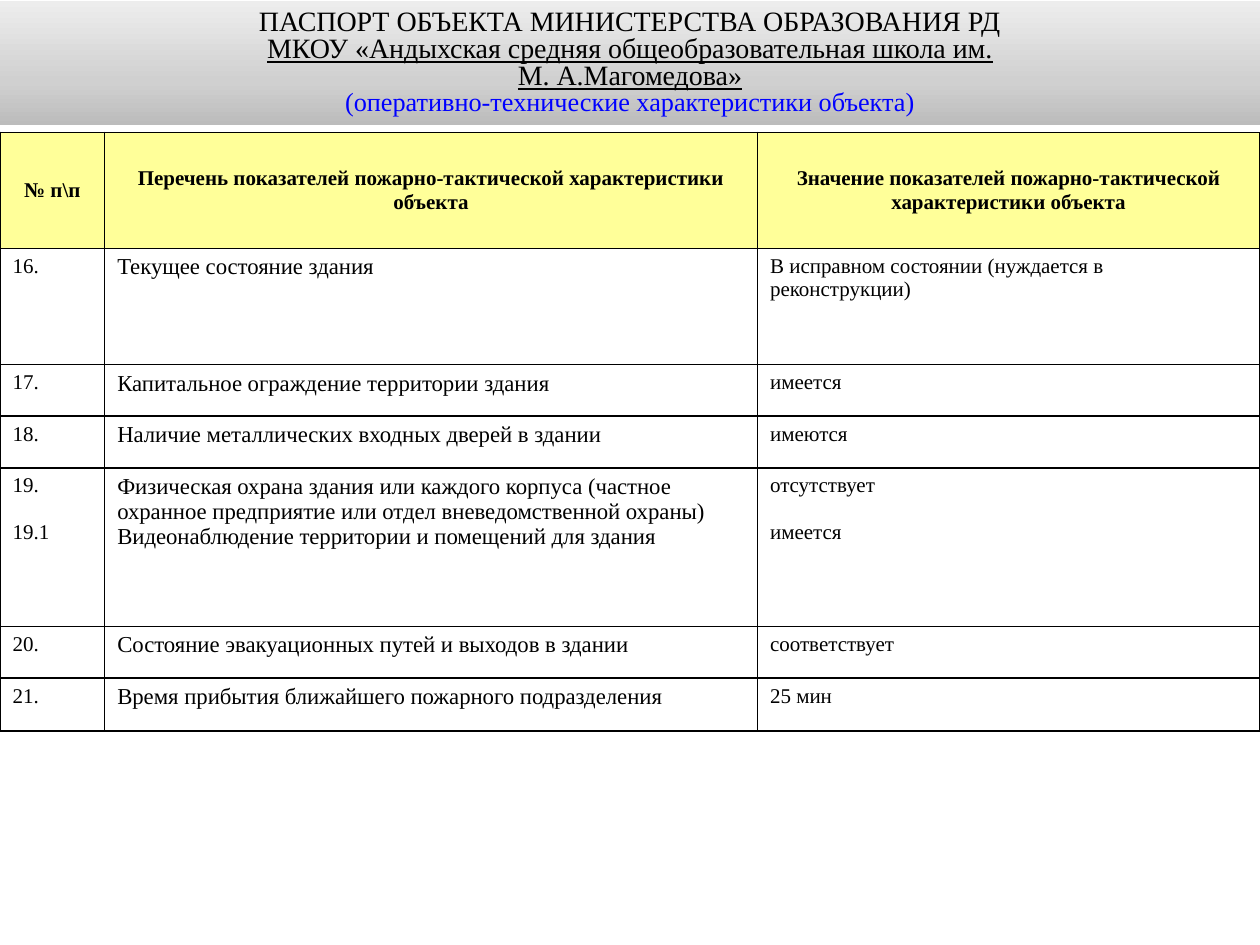
from lxml.etree import SubElement
from pptx import Presentation
from pptx.dml.color import RGBColor
from pptx.enum.text import MSO_ANCHOR, MSO_AUTO_SIZE, PP_ALIGN
from pptx.oxml import parse_xml
from pptx.oxml.ns import nsdecls, qn
from pptx.util import Cm, Pt

COLORS = {
    "text": "000000",
    "accent": "0000FF",
    "header": "FFFF99",
    "cell": "FFFFFF",
    "border": "000000",
}
BANNER_STOPS = [(0, "BCBCBC"), (35, "D0D0D0"), (100, "EDEDED")]

TITLE = [
    "ПАСПОРТ ОБЪЕКТА МИНИСТЕРСТВА ОБРАЗОВАНИЯ РД\v"
    "МКОУ «Андыхская средняя общеобразовательная школа им.\v"
    "М. А.Магомедова»",
    "(оперативно-технические характеристики объекта)",
]
COLUMN_WIDTHS = [2.11, 13.16, 10.13]
ROW_HEIGHTS = [2.34, 2.34, 1.04, 1.04, 3.2, 1.04, 1.07]
ROWS = [
    ("№ п\\п",
     "Перечень показателей пожарно-тактической характеристики объекта",
     "Значение показателей пожарно-тактической характеристики объекта"),
    ("16.", "Текущее состояние здания",
     "В исправном состоянии (нуждается в реконструкции)"),
    ("17.", "Капитальное ограждение территории здания", "имеется"),
    ("18.", "Наличие металлических входных дверей в здании", "имеются"),
    ("19.\n19.1",
     "Физическая охрана здания или каждого корпуса (частное охранное "
     "предприятие или отдел вневедомственной охраны)\n"
     "Видеонаблюдение территории и помещений для здания",
     "отсутствует\nимеется"),
    ("20.", "Состояние эвакуационных путей и выходов в здании", "соответствует"),
    ("21.", "Время прибытия ближайшего пожарного подразделения", "25 мин"),
]


class SlideBuilder:
    font = "Times New Roman"

    def __init__(self, slide):
        self.slide = slide

    def format_span(self, span, size, color="text", bold=False, underline=False):
        span.font.name = self.font
        span.font.size = Pt(size)
        span.font.bold = bold
        span.font.underline = underline
        span.font.color.rgb = RGBColor.from_string(COLORS[color])

    def gradient(self, shape, stops, angle):
        fill = parse_xml(f'<a:gradFill {nsdecls("a")} rotWithShape="1"/>')
        stop_list = SubElement(fill, qn("a:gsLst"))
        for position, color in stops:
            stop = SubElement(stop_list, qn("a:gs"), pos=str(position * 1000))
            SubElement(stop, qn("a:srgbClr"), val=color)
        SubElement(fill, qn("a:lin"), ang=str(angle * 60000), scaled="0")
        shape.fill.background()
        properties = shape.element.spPr
        properties.replace(properties.find(qn("a:noFill")), fill)

    def title(self, lines, left, top, width, height):
        box = self.slide.shapes.title
        box.left, box.top, box.width, box.height = map(Cm, (left, top, width, height))
        self.gradient(box, BANNER_STOPS, 270)
        frame = box.text_frame
        frame.text = "\n".join(lines)
        frame.word_wrap = True
        frame.auto_size = MSO_AUTO_SIZE.NONE
        frame.vertical_anchor = MSO_ANCHOR.MIDDLE
        for para in frame.paragraphs:
            para.alignment = PP_ALIGN.CENTER
            para.line_spacing = 0.8
        heading, subtitle = frame.paragraphs
        for index, span in enumerate(heading.runs):
            self.format_span(span, 16, underline=index > 0)
        self.format_span(subtitle.runs[0], 15, "accent")

    def borders(self, cell):
        properties = cell._tc.get_or_add_tcPr()
        for index, side in enumerate(("lnL", "lnR", "lnT", "lnB")):
            properties.insert(index, parse_xml(
                f'<a:{side} {nsdecls("a")} w="12700"><a:solidFill>'
                f'<a:srgbClr val="{COLORS["border"]}"/></a:solidFill></a:{side}>'))

    def cell(self, cell, text, is_header, size):
        cell.text = text
        cell.fill.solid()
        cell.fill.fore_color.rgb = RGBColor.from_string(
            COLORS["header" if is_header else "cell"])
        cell.vertical_anchor = MSO_ANCHOR.MIDDLE if is_header else MSO_ANCHOR.TOP
        self.borders(cell)
        for index, para in enumerate(cell.text_frame.paragraphs):
            para.alignment = PP_ALIGN.CENTER if is_header else PP_ALIGN.LEFT
            # Short entries keep one line of distance
            if index and size == 12:
                para.space_before = Pt(13.5)
            for span in para.runs:
                self.format_span(span, size, bold=is_header)

    def table(self, rows, widths, heights, left, top):
        table = self.slide.shapes.add_table(
            len(rows), len(widths), Cm(left), Cm(top),
            Cm(sum(widths)), Cm(sum(heights))).table
        table.first_row = table.horz_banding = False
        for column, width in zip(table.columns, widths):
            column.width = Cm(width)
        for row_index, (texts, height) in enumerate(zip(rows, heights)):
            table.rows[row_index].height = Cm(height)
            for column_index, text in enumerate(texts):
                is_header = row_index == 0
                size = 13 if column_index == 1 and not is_header else 12
                self.cell(table.cell(row_index, column_index), text, is_header, size)


def main():
    deck = Presentation()
    deck.slide_width, deck.slide_height = Cm(25.4), Cm(19.05)
    builder = SlideBuilder(deck.slides.add_slide(deck.slide_layouts[5]))

    # Banner with the name of the site
    builder.title(TITLE, 0, 0.03, 25.4, 2.49)

    # Fire safety indicators
    builder.table(ROWS, COLUMN_WIDTHS, ROW_HEIGHTS, 0, 2.67)

    deck.save("out.pptx")


if __name__ == "__main__":
    main()
